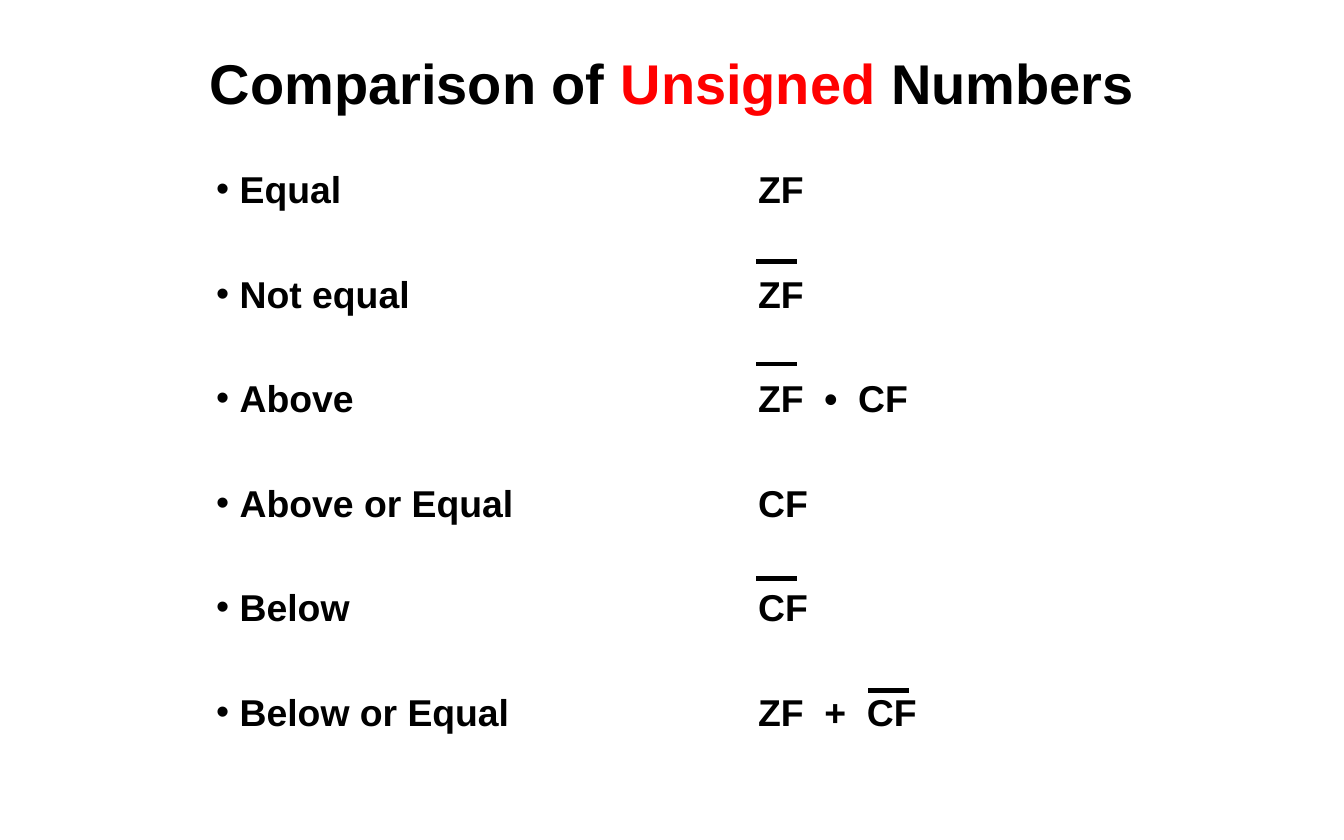
import pptx
import pptx.dml.color
import pptx.enum.shapes
import pptx.enum.text
import pptx.util
import lxml.etree

BLACK = pptx.dml.color.RGBColor(0, 0, 0)
RED = pptx.dml.color.RGBColor(255, 0, 0)
A = "{http://schemas.openxmlformats.org/drawingml/2006/main}"

deck = pptx.Presentation()
deck.slide_width = pptx.util.Inches(12)
deck.slide_height = pptx.util.Inches(7.5)
page = deck.slides.add_slide(deck.slide_layouts[6])

# Grid: 48 columns by 90 rows
COLUMN = deck.slide_width / 48
ROW = deck.slide_height / 90


def add_box(column, row, columns, rows):
    box = page.shapes.add_textbox(
        round(column * COLUMN), round(row * ROW), round(columns * COLUMN), round(rows * ROW))
    frame = box.text_frame
    frame.word_wrap = True
    frame.margin_left = frame.margin_right = frame.margin_top = frame.margin_bottom = 0
    return frame


def add_span(para, text, size, color=BLACK):
    span = para.add_run()
    span.text = text
    span.font.name = "Arial"
    span.font.size = pptx.util.Pt(size)
    span.font.bold = True
    span.font.color.rgb = color


# Title
title = add_box(4, 4, 40, 9)
title.margin_top = pptx.util.Inches(0.05)
title.vertical_anchor = pptx.enum.text.MSO_ANCHOR.MIDDLE
para = title.paragraphs[0]
para.alignment = pptx.enum.text.PP_ALIGN.CENTER
for text, color in (("Comparison of ", BLACK), ("Unsigned", RED), (" Numbers", BLACK)):
    add_span(para, text, 36, color)

# Conditions on the left, the flags that signal them on the right
conditions = ["Equal", "Not equal", "Above", "Above or Equal", "Below", "Below or Equal"]
flags = ["ZF", "ZF", "ZF  •  CF", "CF", "CF", "ZF  +  CF"]
for column, columns, lines, bulleted in ((7.04, 19, conditions, True), (27.08, 14, flags, False)):
    frame = add_box(column, 17.81, columns, 64)
    for index, line in enumerate(lines):
        para = frame.add_paragraph() if index else frame.paragraphs[0]
        para.space_after = pptx.util.Pt(38.4)
        if bulleted:
            properties = para._p.get_or_add_pPr()
            properties.set("marL", str(pptx.util.Inches(0.38)))
            properties.set("indent", str(pptx.util.Inches(-0.21)))
            lxml.etree.SubElement(properties, A + "buFont", typeface="Arial")
            lxml.etree.SubElement(properties, A + "buChar", char="•")
        add_span(para, line, 24)

# Negation bars above the inverted flags
for column, row in ((27, 28), (27, 39), (27, 62), (31, 74)):
    bar = page.shapes.add_connector(
        pptx.enum.shapes.MSO_CONNECTOR.STRAIGHT, round(column * COLUMN), round(row * ROW),
        round((column + 1.48) * COLUMN), round(row * ROW))
    bar.line.color.rgb = BLACK
    bar.line.width = pptx.util.Pt(3)
    lxml.etree.SubElement(bar._element.spPr, A + "effectLst")

deck.save("out.pptx")
